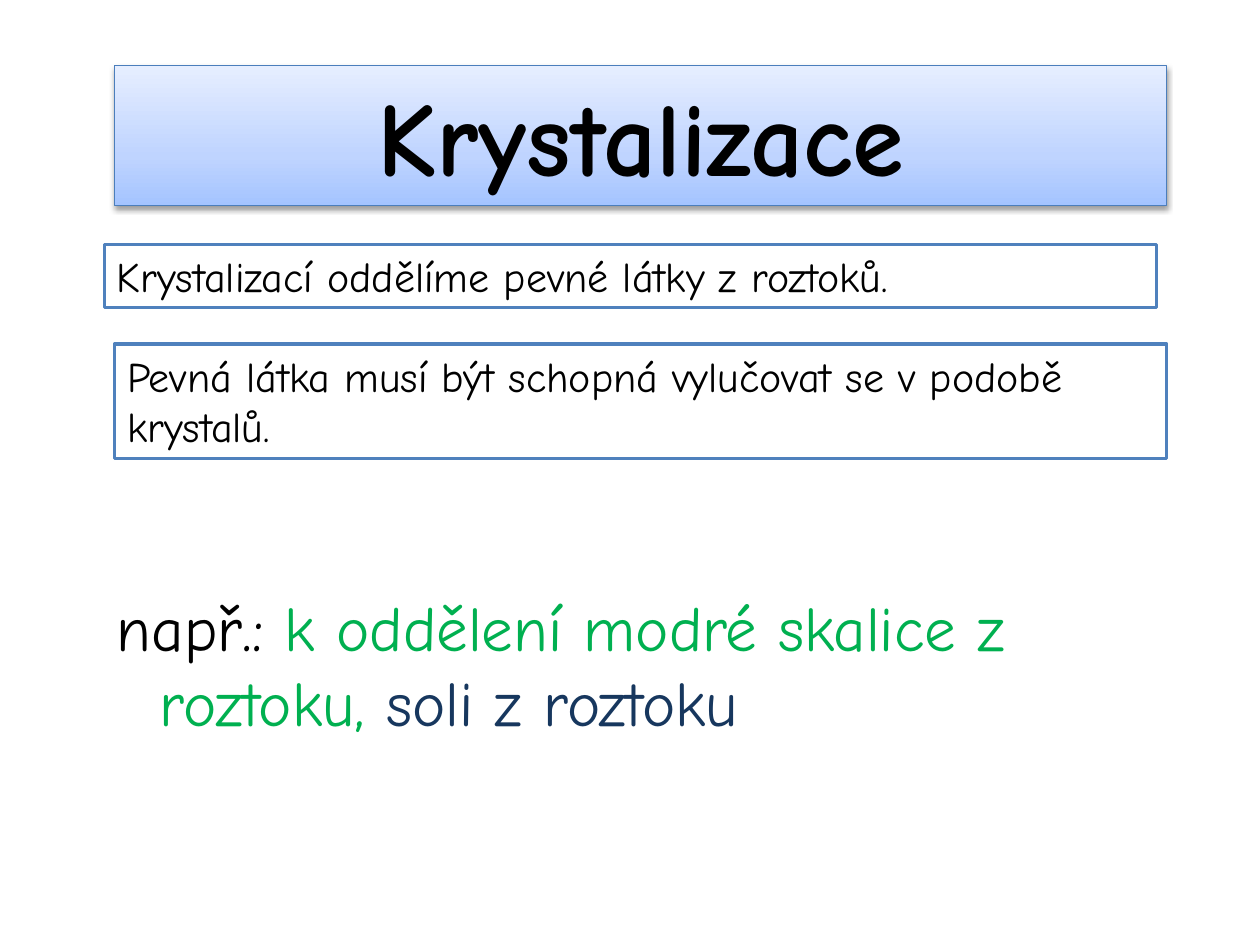
import copy

import lxml.etree
import pptx
import pptx.dml.color
import pptx.enum.text
import pptx.oxml.ns
import pptx.util

Inches = pptx.util.Inches
Pt = pptx.util.Pt
RGBColor = pptx.dml.color.RGBColor
qn = pptx.oxml.ns.qn

FONT = "Comic Neue"
BLACK = RGBColor(0x00, 0x00, 0x00)
WHITE = RGBColor(0xFF, 0xFF, 0xFF)
GREEN = RGBColor(0x00, 0xB0, 0x50)
NAVY = RGBColor(0x17, 0x37, 0x5E)
FRAME_BLUE = RGBColor(0x4F, 0x81, 0xBD)
TITLE_EDGE = RGBColor(0x4B, 0x7E, 0xBC)
TITLE_STOPS = [
    (0, RGBColor(0xA4, 0xC4, 0xFF)),
    (0.35, RGBColor(0xBF, 0xD4, 0xFF)),
    (1, RGBColor(0xE6, 0xEE, 0xFF)),
]

WIDTH = 8.35


def add_text(page, left, top, height, size, spans, bold=False):
    """Add a text box with one paragraph of (text, colour) spans."""
    box = page.shapes.add_textbox(
        Inches(left), Inches(top), Inches(WIDTH), Inches(height))
    frame = box.text_frame
    frame.word_wrap = True
    frame.auto_size = pptx.enum.text.MSO_AUTO_SIZE.SHAPE_TO_FIT_TEXT
    para = frame.paragraphs[0]
    for text, color in spans:
        span = para.add_run()
        span.text = text
        span.font.name = FONT
        span.font.size = Pt(size)
        span.font.bold = bold
        span.font.color.rgb = color
    return box


def set_line(box, color, width):
    box.line.color.rgb = color
    box.line.width = Pt(width)


def set_gradient(box, stops, angle):
    box.fill.gradient()
    box.fill.gradient_angle = angle
    stop_list = box.element.spPr.find(".//" + qn("a:gsLst"))
    while len(stop_list) < len(stops):
        stop_list.append(copy.deepcopy(stop_list[-1]))
    for stop, (position, color) in zip(box.fill.gradient_stops, stops):
        stop.position = position
        stop.color.rgb = color


def add_shadow(box):
    box.shadow.inherit = False
    effects = box.element.spPr.find(qn("a:effectLst"))
    shadow = lxml.etree.SubElement(
        effects, qn("a:outerShdw"), blurRad=str(Pt(3.1)), dist=str(Pt(1.6)),
        dir="5400000", rotWithShape="0")
    color = lxml.etree.SubElement(shadow, qn("a:srgbClr"), val=str(BLACK))
    lxml.etree.SubElement(color, qn("a:alpha"), val="38000")


def add_title(page, text):
    box = add_text(page, 0.91, 0.52, 1.11, 60, [(text, BLACK)], bold=True)
    box.text_frame.paragraphs[0].alignment = pptx.enum.text.PP_ALIGN.CENTER
    set_gradient(box, TITLE_STOPS, 90)
    set_line(box, TITLE_EDGE, 0.75)
    add_shadow(box)


def add_framed_text(page, left, top, height, text):
    box = add_text(page, left, top, height, 24, [(text, BLACK)])
    box.fill.solid()
    box.fill.fore_color.rgb = WHITE
    set_line(box, FRAME_BLUE, 2)


def add_example(page, spans):
    box = add_text(page, 0.83, 4.62, 1.31, 36, spans)
    # Hanging indent for the second line
    properties = box.text_frame.paragraphs[0]._p.get_or_add_pPr()
    properties.set("marL", str(Inches(0.34)))
    properties.set("indent", str(Inches(-0.34)))


def main():
    deck = pptx.Presentation()
    deck.slide_width = Inches(10)
    deck.slide_height = Inches(7.5)
    page = deck.slides.add_slide(deck.slide_layouts[6])

    # Title banner
    add_title(page, "Krystalizace")

    # Framed statements
    add_framed_text(page, 0.83, 1.94, 0.5,
                    "Krystalizací oddělíme pevné látky z roztoků.")
    add_framed_text(page, 0.91, 2.73, 0.91,
                    "Pevná látka musí být schopná vylučovat se v podobě krystalů.")

    # Example
    add_example(page, [
        ("např.: ", BLACK),
        ("k oddělení modré skalice z roztoku, ", GREEN),
        ("soli z roztoku", NAVY),
    ])

    deck.save("out.pptx")


if __name__ == "__main__":
    main()
